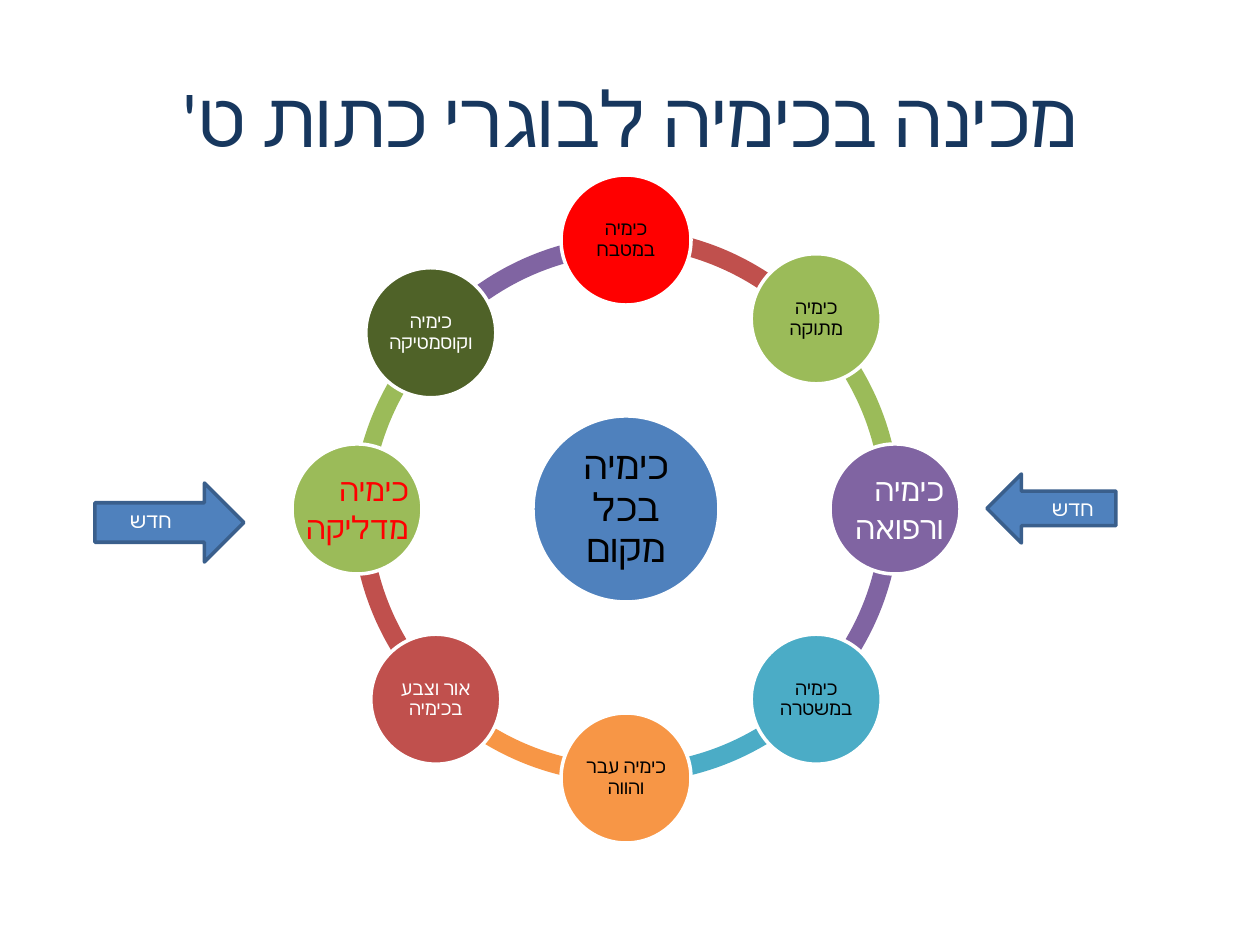
from dataclasses import dataclass
from math import cos, radians, sin

from pptx import Presentation, util as u
from pptx.dml.color import RGBColor
from pptx.enum import shapes, text
from pptx.oxml.xmlchemy import OxmlElement

EMU_PER_PX = 914400 / 126
FONT = "Calibri"
COLORS = {
    "navy": "17375E", "blue": "4F81BD", "outline": "3A5F8C", "red": "FF0000",
    "green": "9BBB59", "purple": "8064A2", "teal": "4BACC6", "orange": "F79646",
    "brick": "C0504D", "olive": "4F6228", "black": "000000", "white": "FFFFFF",
}
CENTER_X, CENTER_Y = 626, 509
ORBIT, ARC_SIZE = 269, 548
TOPIC_SIZE, HUB_SIZE = 130, 186
ARC_THICKNESS = 0.034


@dataclass
class Label:
    words: str
    box: tuple
    size: int
    color: str
    align: text.PP_ALIGN = text.PP_ALIGN.RIGHT
    grow: bool = True


@dataclass
class Topic:
    words: str
    angle: int
    fill: str
    color: str = "black"
    dx: int = 0
    dy: int = 0


@dataclass
class Arc:
    start: float
    end: float
    fill: str
    dx: int = 0
    dy: int = 0


@dataclass
class Arrow:
    kind: shapes.MSO_SHAPE
    box: tuple


TITLE = Label("מכינה בכימיה לבוגרי כתות ט'", (63, 38, 1134, 157), 44, "navy",
              text.PP_ALIGN.CENTER, False)
ARROWS = [
    Arrow(shapes.MSO_SHAPE.LEFT_ARROW, (987, 474, 129, 69)),
    Arrow(shapes.MSO_SHAPE.RIGHT_ARROW, (95, 483, 149, 79)),
]
NEW_LABELS = [
    Label("חדש", (1027, 489, 79, 38), 12, "white"),
    Label("חדש", (105, 501, 79, 38), 12, "white"),
]
# Angles run clockwise from the right
ARCS = [
    Arc(220.8, 268.2, "purple", dx=9),
    Arc(182, 223.6, "green", dy=10),
    Arc(135, 180, "brick"),
    Arc(90, 135, "orange"),
    Arc(45, 90, "teal"),
    Arc(0, 45, "purple"),
    Arc(315, 0, "green"),
    Arc(270, 315, "brick", dx=-8, dy=-7),
]
TOPICS = [
    Topic("כימיה במטבח", 270, "red"),
    Topic("כימיה מתוקה", 315, "green"),
    Topic("", 0, "purple"),
    Topic("כימיה במשטרה", 45, "teal"),
    Topic("כימיה עבר והווה", 90, "orange"),
    Topic("אור וצבע בכימיה", 135, "brick", "white"),
    Topic("", 180, "green"),
    Topic("כימיה וקוסמטיקה", 225, "olive", "white", dx=-5, dy=14),
]
TOPIC_LABELS = [
    Label("כימיה ורפואה", (838, 464, 118, 89), 18, "white"),
    Label("כימיה מדליקה", (292, 464, 129, 89), 18, "red"),
]


def px(value: float) -> int:
    return round(value * EMU_PER_PX)


def rgb(name: str) -> RGBColor:
    return RGBColor.from_string(COLORS[name])


def set_all(target, values: dict) -> None:
    for name, value in values.items():
        setattr(target, name, value)


def write(frame, words: str, size: int, color: str, align, spacing=None) -> None:
    """Write one right-to-left paragraph."""
    paragraph = frame.paragraphs[0]
    set_all(paragraph, {"alignment": align, "line_spacing": spacing})
    paragraph._p.get_or_add_pPr().set("rtl", "1")
    run = paragraph.add_run()
    run.text = words
    set_all(run.font, {"size": u.Pt(size), "name": FONT})
    run.font.color.rgb = rgb(color)
    hebrew_font = OxmlElement("a:cs")
    hebrew_font.set("typeface", FONT)
    run.font._element.append(hebrew_font)


def add_label(slide, label: Label) -> None:
    frame = slide.shapes.add_textbox(*map(px, label.box)).text_frame
    fit = text.MSO_AUTO_SIZE
    anchor = text.MSO_ANCHOR
    set_all(frame, {
        "word_wrap": True,
        "auto_size": fit.SHAPE_TO_FIT_TEXT if label.grow else fit.NONE,
        "vertical_anchor": anchor.TOP if label.grow else anchor.MIDDLE,
    })
    write(frame, label.words, label.size, label.color, label.align)


def add_filled(slide, kind, box: tuple, fill: str, outline: str = ""):
    shape = slide.shapes.add_shape(kind, *map(px, box))
    shape.shadow.inherit = False
    shape.fill.solid()
    shape.fill.fore_color.rgb = rgb(fill)
    if outline:
        shape.line.color.rgb = rgb(outline)
        shape.line.width = u.Pt(2)
    else:
        shape.line.fill.background()
    return shape


def add_arc(slide, arc: Arc) -> None:
    box = (CENTER_X - ARC_SIZE / 2 + arc.dx, CENTER_Y - ARC_SIZE / 2 + arc.dy,
           ARC_SIZE, ARC_SIZE)
    shape = add_filled(slide, shapes.MSO_SHAPE.BLOCK_ARC, box, arc.fill)
    # An angle adjustment of 0.6 is one degree
    for index, value in enumerate((arc.start * 0.6, arc.end * 0.6, ARC_THICKNESS)):
        shape.adjustments[index] = value


def add_circle(slide, x: float, y: float, diameter: int, fill: str,
               words: str, size: int, color: str, inset: int) -> None:
    box = (x - diameter / 2, y - diameter / 2, diameter, diameter)
    circle = add_filled(slide, shapes.MSO_SHAPE.OVAL, box, fill, "white")
    if not words:
        return
    frame = circle.text_frame
    set_all(frame, {"word_wrap": True, "vertical_anchor": text.MSO_ANCHOR.MIDDLE})
    set_all(frame, {f"margin_{side}": px(inset)
                    for side in ("left", "top", "right", "bottom")})
    write(frame, words, size, color, text.PP_ALIGN.CENTER, 0.9)


def add_topic(slide, topic: Topic) -> None:
    angle = radians(topic.angle)
    add_circle(slide, CENTER_X + ORBIT * cos(angle) + topic.dx,
               CENTER_Y + ORBIT * sin(angle) + topic.dy,
               TOPIC_SIZE, topic.fill, topic.words, 11, topic.color, 3)


def main() -> None:
    deck = Presentation()
    set_all(deck, {"slide_width": px(1260), "slide_height": px(945)})
    slide = deck.slides.add_slide(deck.slide_layouts[6])

    # Title and side arrows
    add_label(slide, TITLE)
    for arrow in ARROWS:
        add_filled(slide, arrow.kind, arrow.box, "blue", "outline")
    for label in NEW_LABELS:
        add_label(slide, label)

    # Ring, hub and topics
    for arc in ARCS:
        add_arc(slide, arc)
    add_circle(slide, CENTER_X, CENTER_Y, HUB_SIZE, "blue",
               "כימיה בכל מקום", 22, "black", 4)
    for topic in TOPICS:
        add_topic(slide, topic)
    for label in TOPIC_LABELS:
        add_label(slide, label)

    deck.save("out.pptx")


if __name__ == "__main__":
    main()
